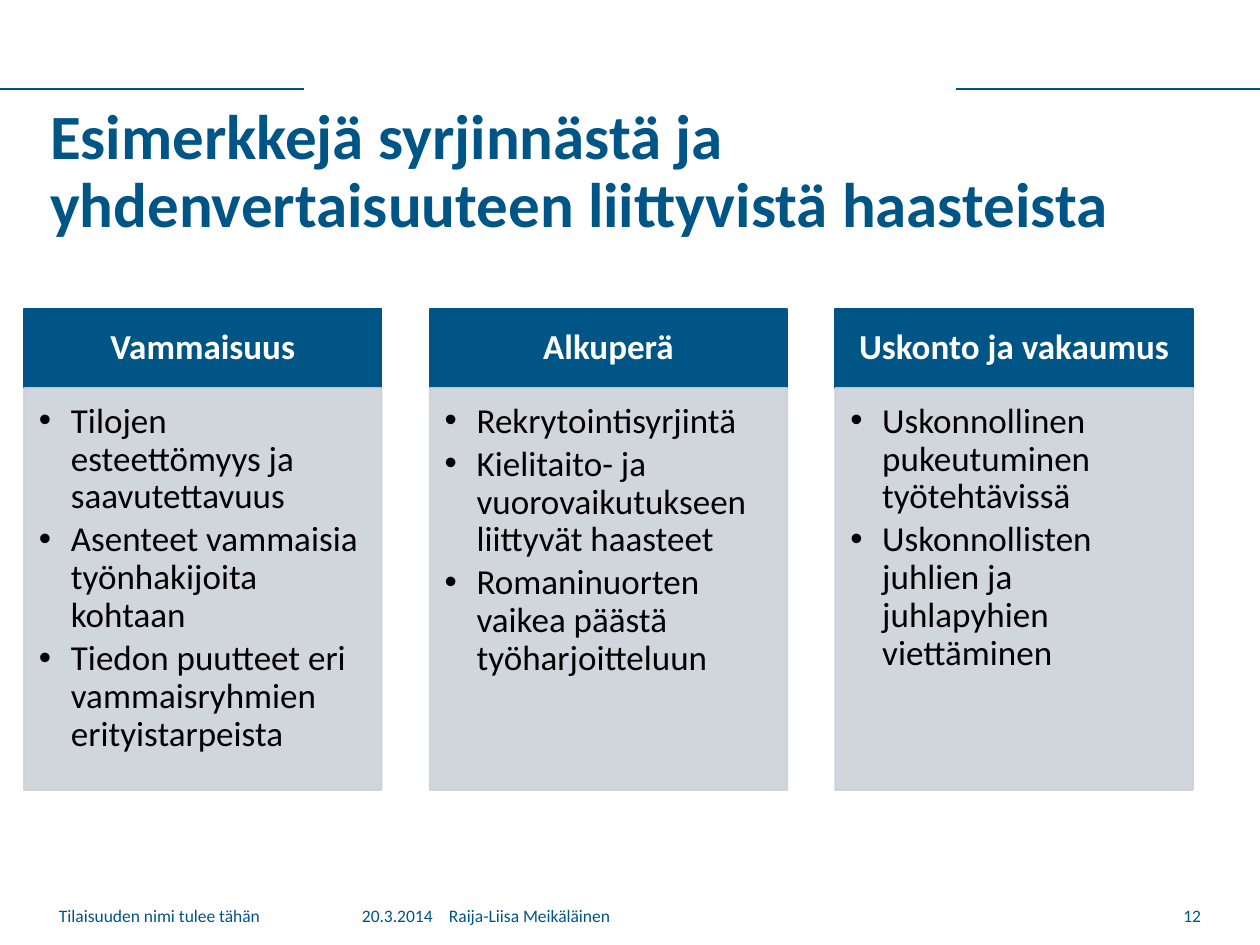
from lxml.etree import SubElement
from pptx import Presentation
from pptx.dml.color import RGBColor
from pptx.enum.shapes import MSO_CONNECTOR, MSO_SHAPE
from pptx.enum.text import MSO_ANCHOR as Anchor, MSO_AUTO_SIZE, PP_ALIGN as Align
from pptx.oxml.ns import qn
from pptx.util import Emu, Pt

PX = 914400 / 126
BLUE, GREY, WHITE, BLACK = "005587", "CCD1D9", "FFFFFF", "000000"
COLUMNS = [
    ("Vammaisuus", ["Tilojen esteettömyys ja saavutettavuus",
                    "Asenteet vammaisia työnhakijoita kohtaan",
                    "Tiedon puutteet eri vammaisryhmien erityistarpeista"]),
    ("Alkuperä", ["Rekrytointisyrjintä",
                  "Kielitaito- ja vuorovaikutukseen liittyvät haasteet",
                  "Romaninuorten vaikea päästä työharjoitteluun"]),
    ("Uskonto ja vakaumus", ["Uskonnollinen pukeutuminen työtehtävissä",
                             "Uskonnollisten juhlien ja juhlapyhien viettäminen"]),
]


def px(length):
    return Emu(round(length * PX))


def color(hex_text):
    return RGBColor.from_string(hex_text)


def set_frame(frame, anchor, insets=(0, 0, 0, 0)):
    frame.word_wrap = True
    frame.auto_size = MSO_AUTO_SIZE.NONE
    frame.vertical_anchor = anchor
    (frame.margin_left, frame.margin_top,
     frame.margin_right, frame.margin_bottom) = map(px, insets)


def style_para(para, size, hex_text, bold=False, align=Align.LEFT, spacing=None):
    para.alignment = align
    para.line_spacing = spacing
    for span in para.runs:
        span.font.name = "Calibri"
        span.font.size = Pt(size)
        span.font.bold = bold
        span.font.color.rgb = color(hex_text)


def add_bullet(para, indent):
    props = para._p.get_or_add_pPr()
    props.set("marL", str(px(indent)))
    props.set("indent", str(-px(indent)))
    SubElement(props, qn("a:buFont"), typeface="Arial")
    SubElement(props, qn("a:buChar"), char="•")


def add_tab(para, position):
    tabs = SubElement(para._p.get_or_add_pPr(), qn("a:tabLst"))
    SubElement(tabs, qn("a:tab"), pos=str(px(position)), algn="l")


def add_panel(page, left, top, width, height, hex_text, alpha=100):
    panel = page.shapes.add_shape(MSO_SHAPE.RECTANGLE, *map(px, (left, top, width, height)))
    panel.shadow.inherit = False
    panel.fill.solid()
    panel.fill.fore_color.rgb = color(hex_text)
    panel.line.color.rgb = color(hex_text)
    panel.line.width = Pt(1)
    if alpha < 100:
        for tone in panel._element.spPr.iter(qn("a:srgbClr")):
            SubElement(tone, qn("a:alpha"), val=str(alpha * 1000))
    return panel


def add_rules(page, top, length, page_width):
    for left in (0, page_width - length):
        rule = page.shapes.add_connector(
            MSO_CONNECTOR.STRAIGHT, *map(px, (left, top, left + length, top)))
        rule.line.color.rgb = color(BLUE)
        rule.line.width = Pt(1.5)
        SubElement(rule._element.spPr, qn("a:effectLst"))


def add_title(page, left, top, width, height):
    title = page.shapes.title
    title.left, title.top, title.width, title.height = map(px, (left, top, width, height))
    frame = title.text_frame
    frame.text = "Esimerkkejä syrjinnästä ja yhdenvertaisuuteen liittyvistä haasteista"
    set_frame(frame, Anchor.TOP)
    style_para(frame.paragraphs[0], 36, BLUE, bold=True, spacing=0.9)


def add_column(page, left, top, width, height, heading, items):
    head_height = 79
    # Heading
    head = add_panel(page, left, top, width, head_height, BLUE)
    head.text_frame.text = heading
    set_frame(head.text_frame, Anchor.MIDDLE, (20, 11, 20, 11))
    style_para(head.text_frame.paragraphs[0], 20, WHITE, True, Align.CENTER, 0.9)
    # Bulleted list
    body = add_panel(page, left, top + head_height, width, height - head_height, GREY, 90)
    body.text_frame.text = "\n".join(items)
    set_frame(body.text_frame, Anchor.TOP, (15, 15, 20, 22))
    for para in body.text_frame.paragraphs:
        add_bullet(para, 32)
        style_para(para, 20, BLACK, spacing=0.9)
        para.space_after = Pt(3)


def add_columns(page, left, top, width, height, gap):
    column_width = (width - gap * (len(COLUMNS) - 1)) / len(COLUMNS)
    for index, (heading, items) in enumerate(COLUMNS):
        add_column(page, left + index * (column_width + gap), top,
                   column_width, height, heading, items)


def add_footer(page, top, height):
    parts = [
        (59, 282, "Tilaisuuden nimi tulee tähän", Align.LEFT),
        (362, 744, "20.3.2014\tRaija-Liisa Meikäläinen", Align.LEFT),
        (1126, 75, "12", Align.RIGHT),
    ]
    for left, width, words, align in parts:
        box = page.shapes.add_textbox(*map(px, (left, top, width, height)))
        box.text_frame.text = words
        set_frame(box.text_frame, Anchor.MIDDLE)
        para = box.text_frame.paragraphs[0]
        if "\t" in words:
            add_tab(para, 87)
        style_para(para, 10, BLUE, align=align)


def main():
    deck = Presentation()
    deck.slide_width, deck.slide_height = px(1260), px(945)
    page = deck.slides.add_slide(deck.slide_layouts[5])
    add_rules(page, 89, 304, 1260)
    add_title(page, 50, 105, 1150, 186)
    add_columns(page, 24, 309, 1169, 481, 48)
    add_footer(page, 898, 36)
    deck.save("out.pptx")


if __name__ == "__main__":
    main()
